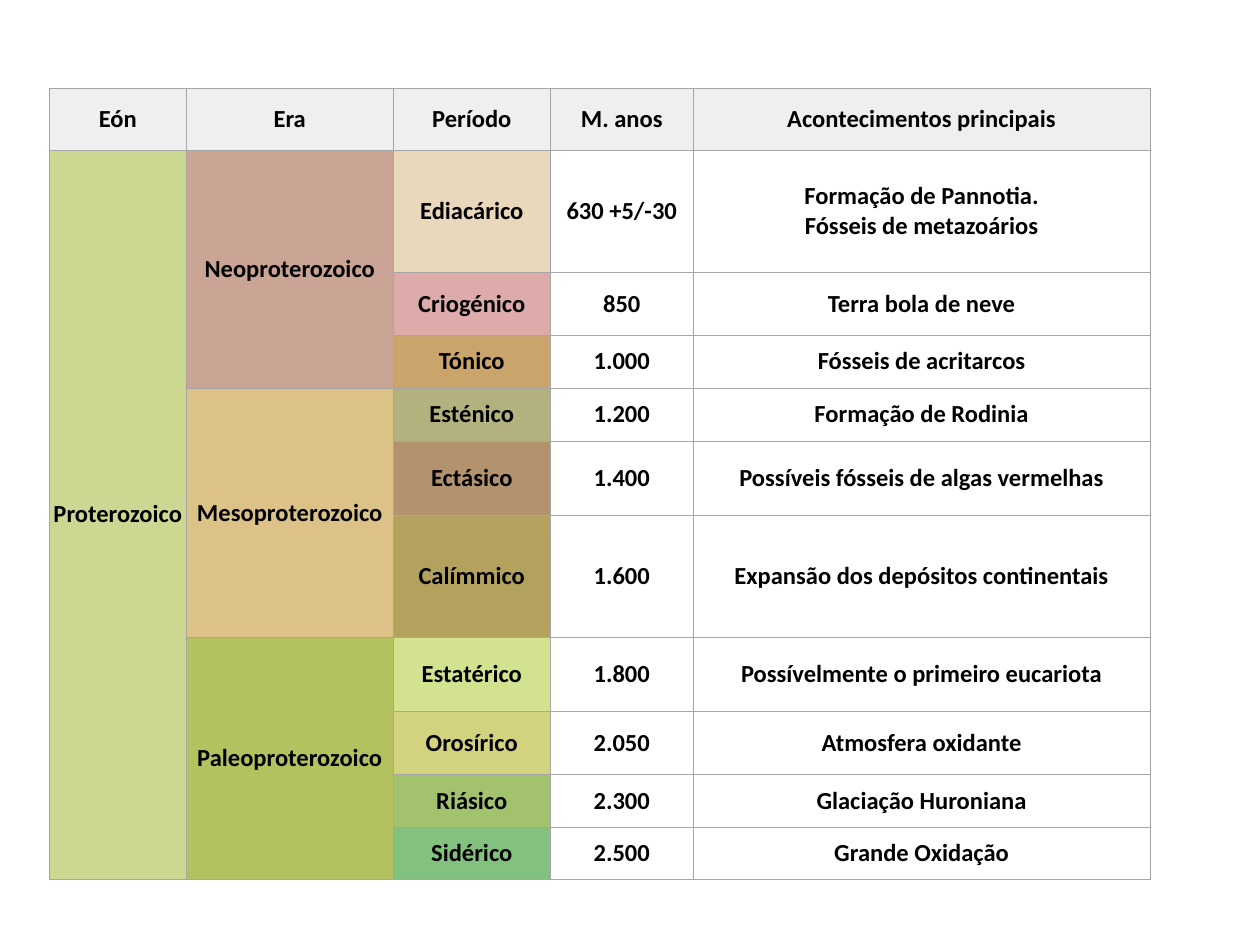
from lxml import etree
from pptx import Presentation
from pptx.dml.color import RGBColor
from pptx.enum.text import MSO_ANCHOR, PP_ALIGN
from pptx.oxml.ns import qn
from pptx.util import Inches, Pt

MIDDLE = MSO_ANCHOR.MIDDLE
CENTER = PP_ALIGN.CENTER

HEAD = ["Eón", "Era", "Período", "M. anos", "Acontecimentos principais"]
EON = ("Proterozoico", "CCD891")
# Era, colour, number of periods
ERAS = [
    ("Neoproterozoico", "CAA595", 3),
    ("Mesoproterozoico", "DDC288", 3),
    ("Paleoproterozoico", "B3C25E", 4),
]
# Period, colour, age, main events, row height
PERIODS = [
    ("Ediacárico", "EAD8BC", "630 +5/-30", "Formação de Pannotia.\vFósseis de metazoários", 0.97),
    ("Criogénico", "DCABAA", "850", "Terra bola de neve", 0.5),
    ("Tónico", "CBA46C", "1.000", "Fósseis de acritarcos", 0.42),
    ("Esténico", "B3B27E", "1.200", "Formação de Rodinia", 0.42),
    ("Ectásico", "B3926E", "1.400", "Possíveis fósseis de algas vermelhas", 0.59),
    ("Calímmico", "B3A25E", "1.600", "Expansão dos depósitos continentais", 0.97),
    ("Estatérico", "D3E28E", "1.800", "Possívelmente o primeiro eucariota", 0.59),
    ("Orosírico", "D3D27E", "2.050", "Atmosfera oxidante", 0.5),
    ("Riásico", "A3C26E", "2.300", "Glaciação Huroniana", 0.42),
    ("Sidérico", "83C27E", "2.500", "Grande Oxidação", 0.41),
]
WIDTHS = [1.09, 1.64, 1.25, 1.13, 3.63]
HEIGHTS = [0.49] + [item[-1] for item in PERIODS]


def color(code):
    return RGBColor.from_string(code)


def style(cell, text="", fill=None):
    cell.margin_left = cell.margin_right = Inches(0.01)
    cell.margin_top = cell.margin_bottom = Inches(0.01)
    cell.vertical_anchor = MIDDLE
    # Thin grey border on all four sides
    props = cell._tc.get_or_add_tcPr()
    for side in ("a:lnL", "a:lnR", "a:lnT", "a:lnB"):
        line = etree.SubElement(props, qn(side), w=str(Pt(0.25)))
        solid = etree.SubElement(line, qn("a:solidFill"))
        etree.SubElement(solid, qn("a:srgbClr"), val="A6A6A6")
    if fill:
        cell.fill.solid()
        cell.fill.fore_color.rgb = color(fill)
    else:
        cell.fill.background()
    cell.text_frame.text = text
    for para in cell.text_frame.paragraphs:
        para.alignment = CENTER
        para.font.size = Pt(14)
        for run in para.runs:
            run.font.name = "Calibri"
            run.font.size = Pt(14)
            run.font.bold = True
            run.font.color.rgb = color("000000")


# Slide
deck = Presentation()
deck.slide_width, deck.slide_height = Inches(10), Inches(7.5)
slide = deck.slides.add_slide(deck.slide_layouts[6])

# Table grid
frame = slide.shapes.add_table(
    len(HEIGHTS), len(WIDTHS), Inches(0.39), Inches(0.7),
    Inches(sum(WIDTHS)), Inches(sum(HEIGHTS)))
table = frame.table
table.first_row = table.horz_banding = False
for col, width in zip(table.columns, WIDTHS):
    col.width = Inches(width)
for row, height in zip(table.rows, HEIGHTS):
    row.height = Inches(height)

# Header row
for c, text in enumerate(HEAD):
    style(table.cell(0, c), text, "EFEFEF")

# Eon, over all the periods
last = len(PERIODS)
for r in range(1, last + 1):
    style(table.cell(r, 0), EON[0] if r == 1 else "", EON[1])
table.cell(1, 0).merge(table.cell(last, 0))

# Eras, each over its own periods
top = 1
for name, fill, count in ERAS:
    for r in range(top, top + count):
        style(table.cell(r, 1), name if r == top else "", fill)
    table.cell(top, 1).merge(table.cell(top + count - 1, 1))
    top += count

# Periods, ages and events
for r, (name, fill, age, event, height) in enumerate(PERIODS, 1):
    style(table.cell(r, 2), name, fill)
    style(table.cell(r, 3), age)
    style(table.cell(r, 4), event)

deck.save("out.pptx")
